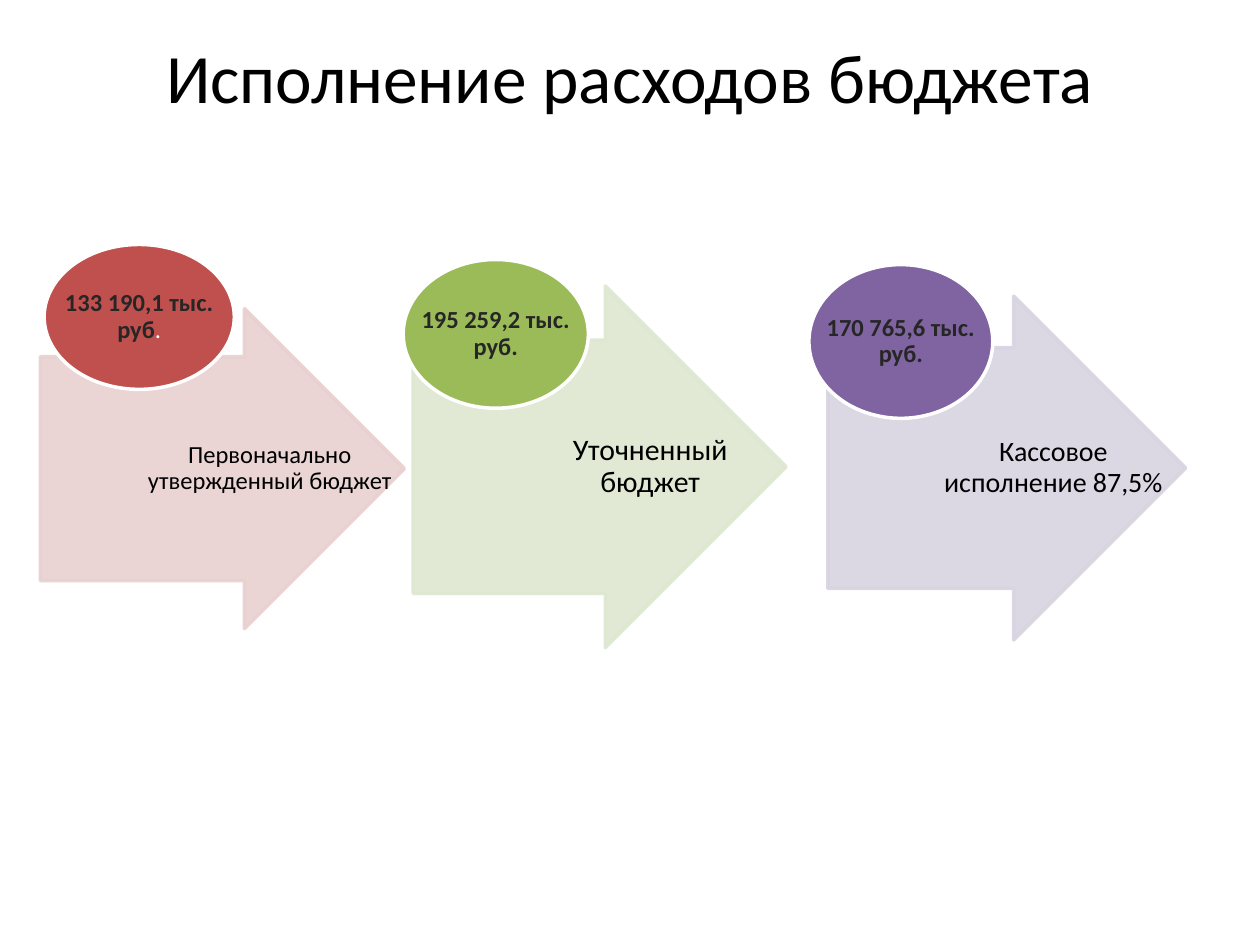
from lxml.etree import SubElement
from pptx import Presentation
from pptx.dml.color import RGBColor
from pptx.enum.shapes import MSO_SHAPE as Shape
from pptx.enum.text import MSO_ANCHOR as Anchor, PP_ALIGN as Align
from pptx.oxml.ns import qn
from pptx.util import Inches, Pt

# Content
TITLE = "Исполнение расходов бюджета"
COLORS = {
    "black": "000000", "dark": "262626", "white": "FFFFFF",
    "red": "C0504D", "red_pale": "E8D0D0",
    "green": "9BBB59", "green_pale": "DEE7D1",
    "purple": "8064A2", "purple_pale": "D8D3E0",
}
# Boxes are left, top, width, height; an amount is a list of (text, color, bold)
STAGES = [
    {"color": "red", "arrow": (0.32, 2.45, 2.89, 2.54), "circle": (0.35, 1.94, 1.51, 1.15),
     "label": ["Первоначально", "утвержденный бюджет"], "size": 14, "inset": 0.04,
     "amount": [("133 190,1 тыс. руб", "dark", True), (".", "white", False)]},
    {"color": "green", "arrow": (3.28, 2.27, 2.96, 2.87), "circle": (3.2, 2.06, 1.47, 1.18),
     "label": ["Уточненный", "бюджет"], "size": 17, "inset": 0.07,
     "amount": [("195 259,2 тыс. руб.", "dark", True)]},
    {"color": "purple", "arrow": (6.57, 2.35, 2.84, 2.73), "circle": (6.42, 2.1, 1.46, 1.22),
     "label": ["Кассовое", "исполнение 87,5%"], "size": 16, "inset": 0.04,
     "amount": [("170 765,6 тыс. руб.", "dark", True)]},
]
LABEL_START = 0.25  # share of the arrow width left of its label
OPACITY = 90


def rgb(name):
    return RGBColor.from_string(COLORS[name])


def add_shape(page, kind, box, fill, line):
    shape = page.shapes.add_shape(kind, *map(Inches, box))
    shape.shadow.inherit = False
    shape.fill.solid()
    shape.fill.fore_color.rgb = rgb(fill)
    shape.line.color.rgb = rgb(line)
    shape.line.width = Pt(2)
    return shape


def set_opacity(shape, percent):
    for color in shape._element.spPr.iter(qn("a:srgbClr")):
        SubElement(color, qn("a:alpha"), val=str(percent * 1000))


def add_text(page, box, left_inset=0.01, spacing=0.9):
    frame = page.shapes.add_textbox(*map(Inches, box)).text_frame
    frame.word_wrap = True
    frame.vertical_anchor = Anchor.MIDDLE
    frame.margin_left = Inches(left_inset)
    frame.margin_right = frame.margin_top = frame.margin_bottom = Inches(0.01)
    para = frame.paragraphs[0]
    para.alignment = Align.CENTER
    para.line_spacing = spacing
    return para


def add_span(para, text, size, color="black", bold=False):
    span = para.add_run()
    span.text = text
    span.font.name = "Calibri"
    span.font.size = Pt(size)
    span.font.bold = bold
    span.font.color.rgb = rgb(color)


deck = Presentation()
deck.slide_width, deck.slide_height = Inches(10), Inches(7.5)
page = deck.slides.add_slide(deck.slide_layouts[6])

# Title
add_span(add_text(page, (0.5, 0.3, 9, 0.61), spacing=1.0), TITLE, 39.6)

for stage in STAGES:
    # Arrow
    pale = stage["color"] + "_pale"
    arrow = add_shape(page, Shape.RIGHT_ARROW, stage["arrow"], pale, pale)
    arrow.adjustments[0], arrow.adjustments[1] = 0.7, 0.5
    set_opacity(arrow, OPACITY)

    # Label over the right part of the arrow
    left, top, width, height = stage["arrow"]
    indent = width * LABEL_START
    para = add_text(page, (left + indent, top, width - indent, height), stage["inset"])
    for number, line in enumerate(stage["label"]):
        if number:
            para.add_line_break()
        add_span(para, line, stage["size"])

    # Circle with the amount across its full width
    add_shape(page, Shape.OVAL, stage["circle"], stage["color"], "white")
    para = add_text(page, stage["circle"])
    for text, color, bold in stage["amount"]:
        add_span(para, text, 14, color, bold)

deck.save("out.pptx")
